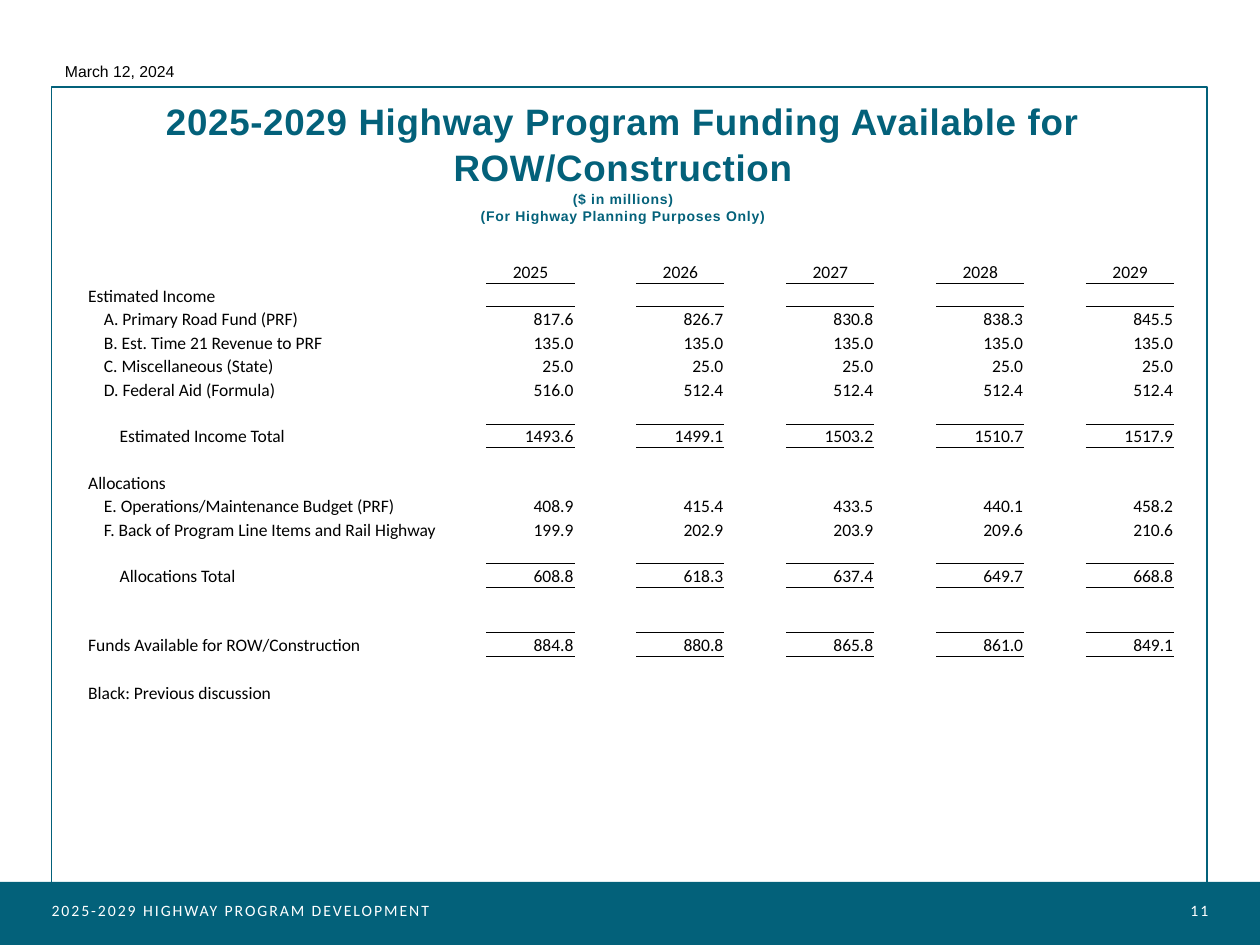
import pptx
import pptx.util
import pptx.dml.color
import pptx.enum.shapes
import pptx.enum.text
import pptx.oxml.ns
from lxml import etree

Inches, Pt = pptx.util.Inches, pptx.util.Pt
RGBColor = pptx.dml.color.RGBColor
ALIGN, ANCHOR = pptx.enum.text.PP_ALIGN, pptx.enum.text.MSO_ANCHOR
qn = pptx.oxml.ns.qn

TEAL = RGBColor(0x03, 0x61, 0x7A)
WHITE = RGBColor(0xFF, 0xFF, 0xFF)
BLACK = RGBColor(0, 0, 0)

WIDTH, HEIGHT = 10, 7.5
TITLE = [
    ("2025-2029 Highway Program Funding Available for ROW/Construction", 21),
    ("($ in millions)", 8),
    ("(For Highway Planning Purposes Only)", 8),
]
DATE = "March 12, 2024"
FOOTER = [
    ("2025-2029 HIGHWAY PROGRAM DEVELOPMENT", 0.41, 3.84, ALIGN.LEFT),
    ("11", 8.62, 0.97, ALIGN.RIGHT),
]
BAND = [(0, 6.51), (4.96, 7.1), (5.07, 7.1), (10, 6.51), (10, 7.5), (0, 7.5)]

YEARS = ["2025", "2026", "2027", "2028", "2029"]
BLANK = (0, "", [])
ROWS = [
    (0, "", YEARS),
    (0, "Estimated Income", []),
    (1, "A. Primary Road Fund (PRF)", ["817.6", "826.7", "830.8", "838.3", "845.5"]),
    (1, "B. Est. Time 21 Revenue to PRF", ["135.0"] * 5),
    (1, "C. Miscellaneous (State)", ["25.0"] * 5),
    (1, "D. Federal Aid (Formula)", ["516.0"] + ["512.4"] * 4),
    BLANK,
    (2, "Estimated Income Total", ["1493.6", "1499.1", "1503.2", "1510.7", "1517.9"]),
    BLANK,
    (0, "Allocations", []),
    (1, "E. Operations/Maintenance Budget (PRF)", ["408.9", "415.4", "433.5", "440.1", "458.2"]),
    (1, "F. Back of Program Line Items and Rail Highway", ["199.9", "202.9", "203.9", "209.6", "210.6"]),
    BLANK,
    (2, "Allocations Total", ["608.8", "618.3", "637.4", "649.7", "668.8"]),
    BLANK,
    BLANK,
    (0, "Funds Available for ROW/Construction", ["884.8", "880.8", "865.8", "861.0", "849.1"]),
    BLANK,
    (0, "Black: Previous discussion", []),
]
RULED_BELOW = {0, 6, 12, 15}
COLUMNS = [3.08, 0.09] + [0.7, 0.49] * (len(YEARS) - 1) + [0.7]
INDENT = Pt(9)
NO_STYLE = "{2D5ABB26-0587-4C30-8999-92F81FD0307C}"


def write(tf, text, size=10, font="Calibri", color=BLACK, bold=False,
          align=ALIGN.LEFT, spacing=0, line=None):
    p = tf.paragraphs[0]
    if p.runs:
        p = tf.add_paragraph()
    p.alignment = align
    if line:
        p.line_spacing = line
    if not text:
        etree.SubElement(p._p, qn("a:endParaRPr"), sz=str(size * 100))
        return
    r = p.add_run()
    r.text = text
    r.font.size, r.font.name, r.font.bold = Pt(size), font, bold
    r.font.color.rgb = color
    if spacing:
        r._r.get_or_add_rPr().set("spc", str(round(spacing * 100)))


def set_margins(tf, left, top, right, bottom):
    tf.margin_left, tf.margin_top = Inches(left), Inches(top)
    tf.margin_right, tf.margin_bottom = Inches(right), Inches(bottom)


def add_rule(cell, edge):
    ln = etree.SubElement(cell._tc.get_or_add_tcPr(), qn(edge), w=str(Pt(0.5)))
    fill = etree.SubElement(ln, qn("a:solidFill"))
    etree.SubElement(fill, qn("a:srgbClr"), val=str(BLACK))


def add_background(s):
    builder = s.shapes.build_freeform(*BAND[0], scale=Inches(1))
    builder.add_line_segments(BAND[1:], close=True)
    band = builder.convert_to_shape()
    band.shadow.inherit = False
    band.fill.solid()
    band.fill.fore_color.rgb = TEAL
    band.line.fill.background()
    frame = s.shapes.add_shape(pptx.enum.shapes.MSO_SHAPE.RECTANGLE,
                               Inches(0.41), Inches(0.69), Inches(9.17), Inches(6.66))
    frame.shadow.inherit = False
    frame.fill.background()
    frame.line.color.rgb = TEAL
    frame.line.width = Pt(1)


def add_texts(s):
    for text, left, width, align in FOOTER:
        tf = s.shapes.add_textbox(Inches(left), Inches(6.95), Inches(width), Inches(0.4)).text_frame
        tf.word_wrap = True
        tf.vertical_anchor = ANCHOR.BOTTOM
        set_margins(tf, 0, 0.05, 0, 0.05)
        write(tf, text, size=9, color=WHITE, align=align, spacing=1.1)
    tf = s.shapes.add_textbox(Inches(0.4), Inches(0.44), Inches(1.1), Inches(0.25)).text_frame
    tf.word_wrap = False
    write(tf, DATE, size=9, font="Arial", align=ALIGN.CENTER)

    title = s.shapes.title
    title.left, title.top = Inches(0.82), Inches(0.71)
    title.width, title.height = Inches(8.35), Inches(1.19)
    tf = title.text_frame
    tf.word_wrap = True
    tf.auto_size = pptx.enum.text.MSO_AUTO_SIZE.NONE
    tf.vertical_anchor = ANCHOR.TOP
    set_margins(tf, 0, 0.05, 0.1, 0.05)
    for text, size in TITLE:
        write(tf, text, size=size, font="Arial", color=TEAL, bold=True,
              align=ALIGN.CENTER, spacing=0.4, line=1.06)


def add_funding_table(s):
    heights = [Pt(13) if row is BLANK and i < 16 else Pt(13.5) for i, row in enumerate(ROWS)]
    shape = s.shapes.add_table(len(ROWS), len(COLUMNS), Inches(0.69), Inches(2.06),
                               Inches(sum(COLUMNS)), sum(heights))
    table = shape.table
    table.first_row = table.horz_banding = False
    table._tbl.tblPr.find(qn("a:tableStyleId")).text = NO_STYLE
    for column, width in zip(table.columns, COLUMNS):
        column.width = Inches(width)
    for i, (level, label, values) in enumerate(ROWS):
        table.rows[i].height = heights[i]
        texts = {0: label, **{2 + 2 * n: value for n, value in enumerate(values)}}
        for j in range(len(COLUMNS)):
            cell = table.cell(i, j)
            is_value = j >= 2 and j % 2 == 0
            set_margins(cell, 0.01, 0.01, 0.01, 0)
            cell.vertical_anchor = ANCHOR.BOTTOM
            if is_value and i - 1 in RULED_BELOW:
                add_rule(cell, "a:lnT")
            if is_value and i in RULED_BELOW:
                add_rule(cell, "a:lnB")
            cell.fill.solid()
            cell.fill.fore_color.rgb = WHITE
            align = ALIGN.LEFT
            if is_value:
                align = ALIGN.CENTER if values is YEARS else ALIGN.RIGHT
            if j == 0:
                cell.margin_left += level * INDENT
            write(cell.text_frame, texts.get(j, ""), align=align)
    last = len(ROWS) - 1
    table.cell(last, 9).merge(table.cell(last, 10))


def main():
    prs = pptx.Presentation()
    prs.slide_width, prs.slide_height = Inches(WIDTH), Inches(HEIGHT)
    s = prs.slides.add_slide(prs.slide_layouts[5])
    add_background(s)
    add_texts(s)
    add_funding_table(s)
    prs.save("out.pptx")


if __name__ == "__main__":
    main()
